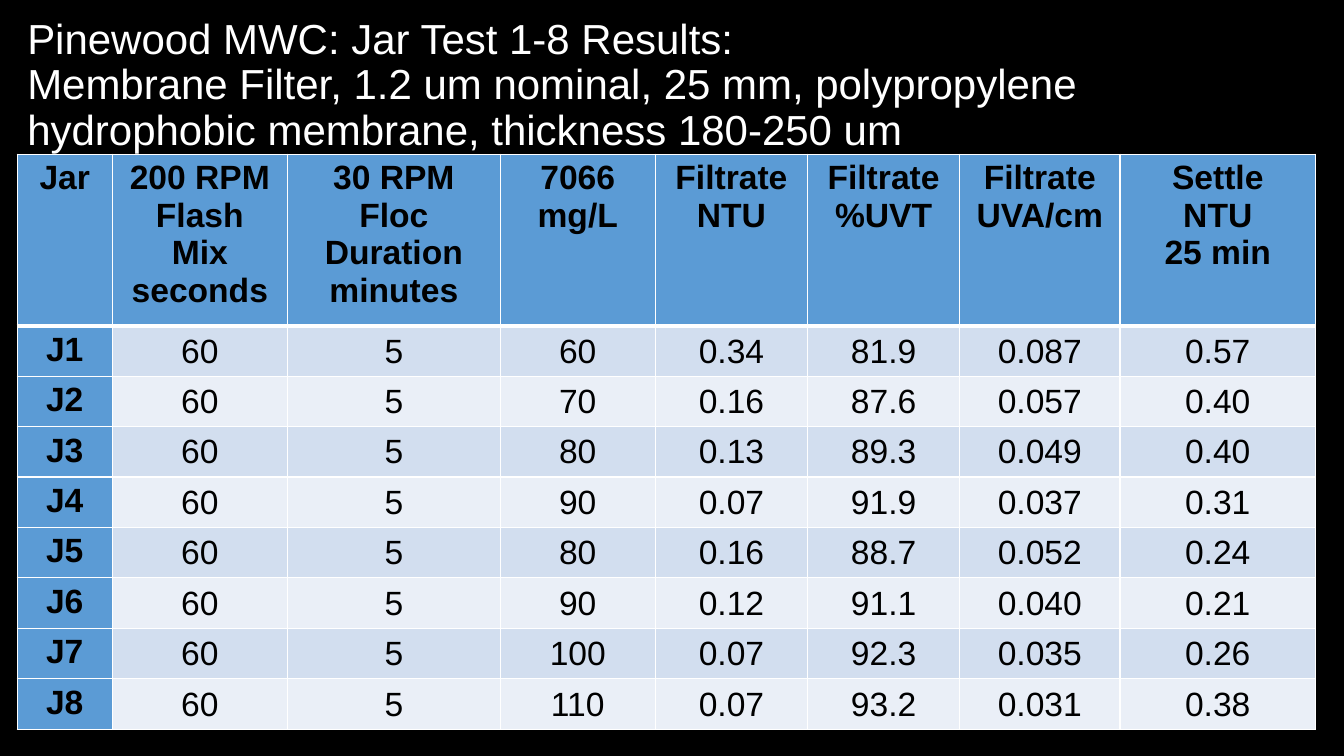
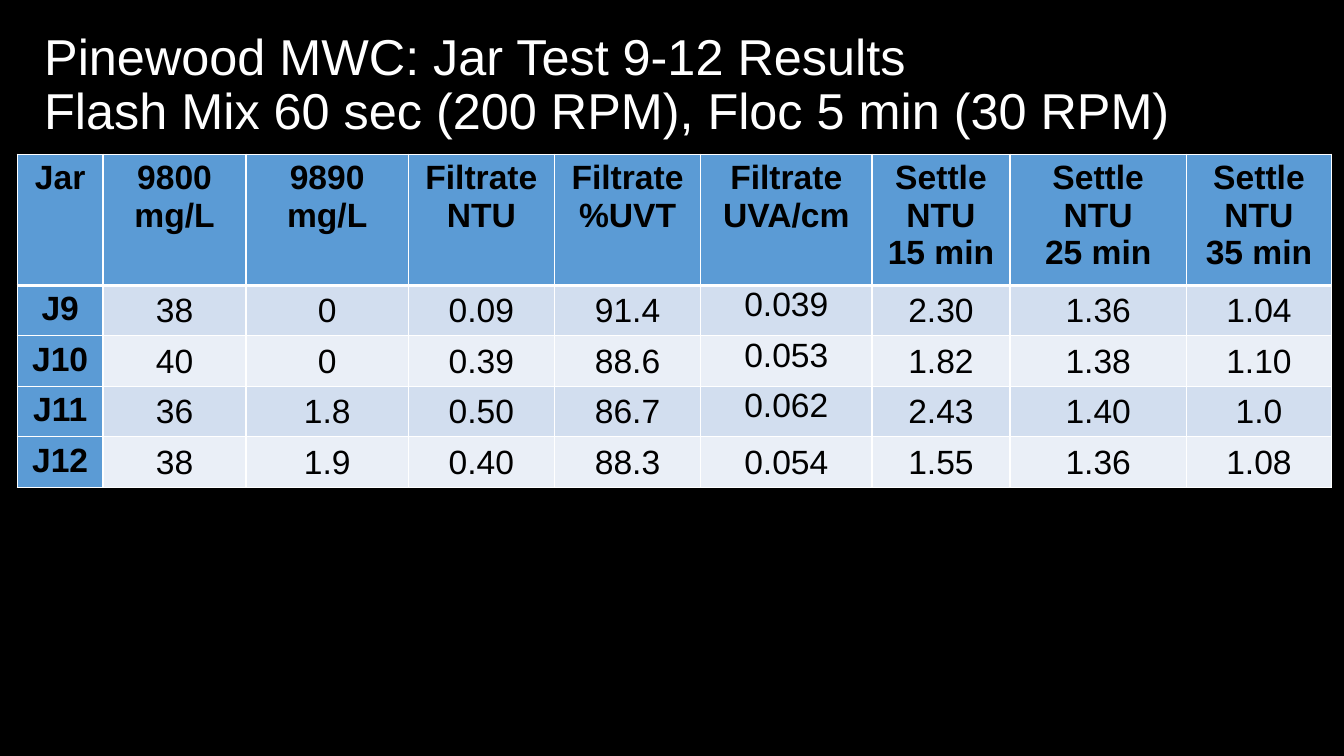
from lxml import etree
from pptx import Presentation
from pptx.dml.color import RGBColor
from pptx.enum.text import MSO_ANCHOR, PP_ALIGN
from pptx.oxml.ns import qn
from pptx.util import Pt

BLACK, WHITE, BLUE = "000000", "FFFFFF", "5B9BD5"
BANDS = ["D2DEEF", "EAEFF7"]
LEFT, TOP, LINE, PAD, ROW = 12.4, 110.2, 26.6, 7.2, 33.9


def style(para, size, hue, bold=False):
    para.font.name = "Arial"
    para.font.size = Pt(size)
    para.font.bold = bold
    para.font.color.rgb = RGBColor.from_string(hue)


def border(cell, top, low):
    props = cell._tc.get_or_add_tcPr()
    sides = {"lnL": 1, "lnR": 1, "lnT": top, "lnB": low}
    for spot, (side, width) in enumerate(sides.items()):
        line = etree.Element(qn("a:" + side), w=str(Pt(width)))
        fill = etree.SubElement(line, qn("a:solidFill"))
        etree.SubElement(fill, qn("a:srgbClr"), val=WHITE)
        props.insert(spot, line)


pages = [
    {
        "title": "Pinewood MWC: Jar Test 1-8 Results:\n"
                 "Membrane Filter, 1.2 um nominal, 25 mm, polypropylene "
                 "hydrophobic membrane, thickness 180-250 um",
        "size": 30, "left": 12.4, "width": 935.3, "lines": 4, "high": [],
        "cols": [67.7, 125.3, 151.9, 110.9, 108.7, 108.7, 114.5, 139.7],
        "head": ["Jar", "200 RPM\nFlash\nMix\nseconds",
                 "30 RPM Floc\nDuration\nminutes", "7066\nmg/L",
                 "Filtrate\nNTU", "Filtrate\n%UVT", "Filtrate\nUVA/cm",
                 "Settle\nNTU\n25 min"],
        "rows": ["J1 60 5 60 0.34 81.9 0.087 0.57",
                 "J2 60 5 70 0.16 87.6 0.057 0.40",
                 "J3 60 5 80 0.13 89.3 0.049 0.40",
                 "J4 60 5 90 0.07 91.9 0.037 0.31",
                 "J5 60 5 80 0.16 88.7 0.052 0.24",
                 "J6 60 5 90 0.12 91.1 0.040 0.21",
                 "J7 60 5 100 0.07 92.3 0.035 0.26",
                 "J8 60 5 110 0.07 93.2 0.031 0.38"],
    },
    {
        "title": "Pinewood MWC: Jar Test 9-12 Results\n"
                 "Flash Mix 60 sec (200 RPM), Floc 5 min (30 RPM)",
        "size": 36, "left": 24.5, "width": 869.8, "lines": 3,
        "high": [(1, 5), (2, 5), (3, 5)],
        "cols": [61.2, 102.2, 115.9, 104.4, 104.4, 122.4, 98.6, 126, 103.7],
        "head": ["Jar", "9800\nmg/L", "9890\nmg/L", "Filtrate\nNTU",
                 "Filtrate\n%UVT", "Filtrate\nUVA/cm", "Settle\nNTU\n15 min",
                 "Settle\nNTU\n25 min", "Settle\nNTU\n35 min"],
        "rows": ["J9 38 0 0.09 91.4 0.039 2.30 1.36 1.04",
                 "J10 40 0 0.39 88.6 0.053 1.82 1.38 1.10",
                 "J11 36 1.8 0.50 86.7 0.062 2.43 1.40 1.0",
                 "J12 38 1.9 0.40 88.3 0.054 1.55 1.36 1.08"],
    },
]

deck = Presentation()
deck.slide_width, deck.slide_height = Pt(960), Pt(540)
ground = deck.slide_master.background.fill
ground.solid()
ground.fore_color.rgb = RGBColor.from_string(BLACK)

for page in pages:
    slide = deck.slides.add_slide(deck.slide_layouts[6])
    box = slide.shapes.add_textbox(
        Pt(page["left"]), Pt(9.4), Pt(page["width"]), Pt(104.4))
    frame = box.text_frame
    frame.word_wrap = True
    frame.vertical_anchor = MSO_ANCHOR.MIDDLE
    title = frame.paragraphs[0]
    title.text = page["title"]
    title.line_spacing = 0.9
    style(title, page["size"], WHITE)

    data = [page["head"]] + [row.split() for row in page["rows"]]
    cols = page["cols"]
    tall = [LINE * page["lines"] + PAD] + [ROW] * len(page["rows"])
    grid = slide.shapes.add_table(
        len(data), len(cols), Pt(LEFT), Pt(TOP), Pt(sum(cols)), Pt(sum(tall))).table
    grid.first_row = grid.horz_banding = False
    for col, width in zip(grid.columns, cols):
        col.width = Pt(width)
    for r, row in enumerate(data):
        grid.rows[r].height = Pt(tall[r])
        for c, word in enumerate(row):
            cell = grid.cell(r, c)
            label = r == 0 or c == 0
            cell.text_frame.text = word
            for para in cell.text_frame.paragraphs:
                para.alignment = PP_ALIGN.CENTER
                style(para, 24, BLACK, label)
            cell.fill.solid()
            cell.fill.fore_color.rgb = RGBColor.from_string(
                BLUE if label else BANDS[(r - 1) % 2])
            if not label:
                cell.margin_left = cell.margin_right = cell.margin_top = Pt(0.7)
                cell.margin_bottom = 0
                if (r, c) not in page["high"]:
                    cell.vertical_anchor = MSO_ANCHOR.MIDDLE
            border(cell, 3 if r == 1 else 1, 3 if r == 0 else 1)

deck.save("out.pptx")
